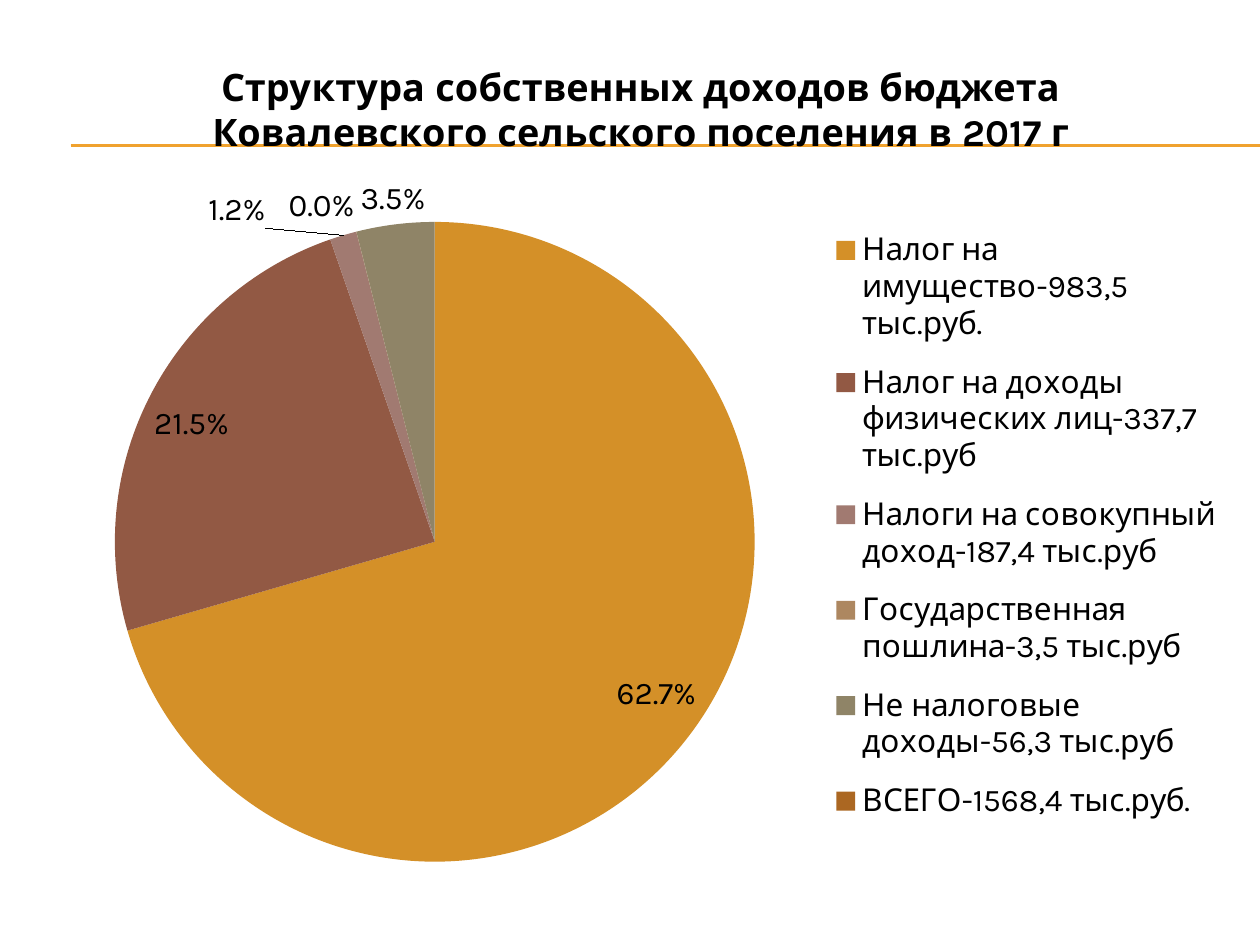
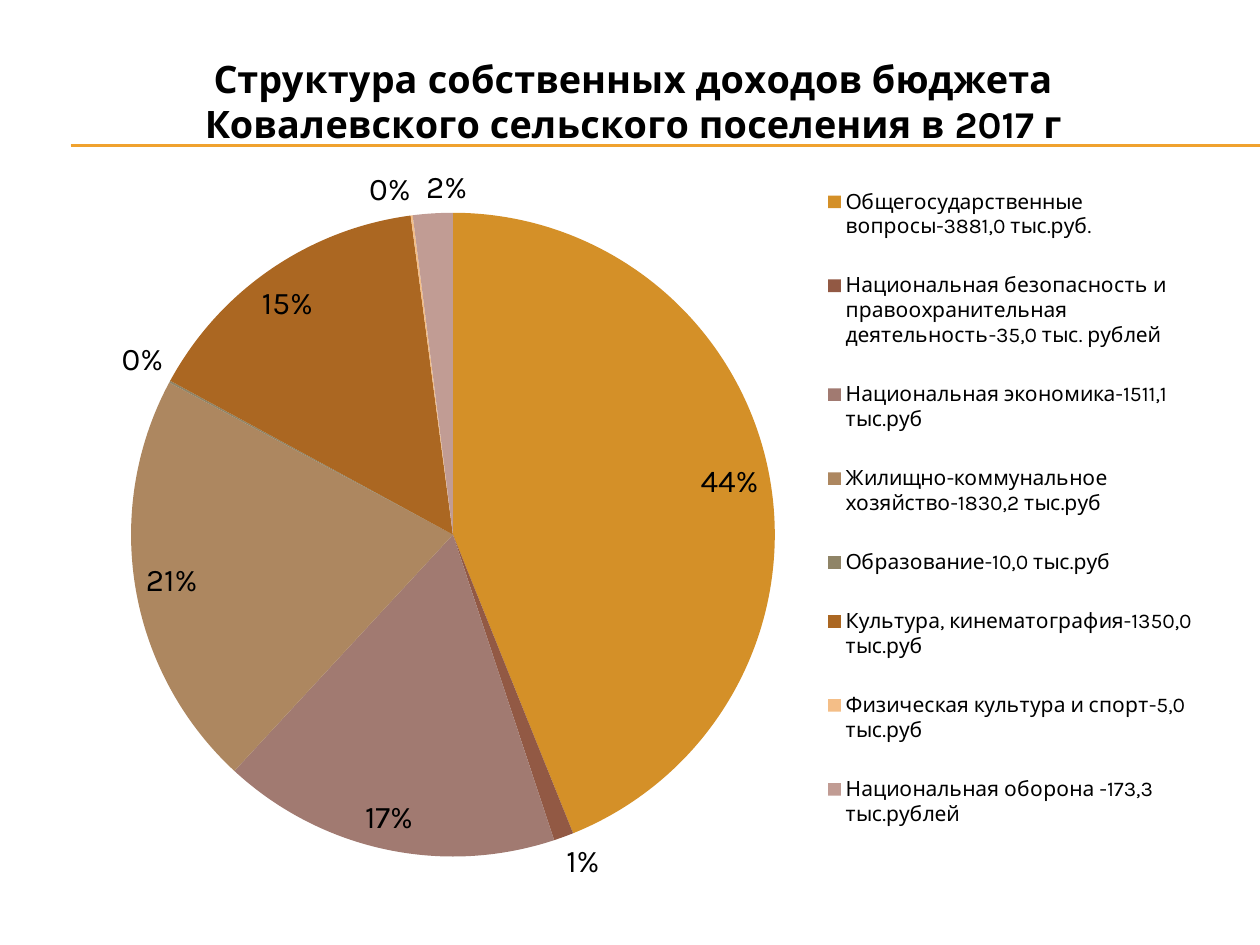
from pptx import Presentation
from pptx.chart.data import CategoryChartData
from pptx.dml.color import RGBColor
from pptx.enum.chart import XL_CHART_TYPE, XL_LABEL_POSITION, XL_LEGEND_POSITION
from pptx.enum.shapes import MSO_CONNECTOR
from pptx.oxml.ns import qn
from pptx.util import Inches, Pt
from lxml import etree

PIE = XL_CHART_TYPE.PIE
FIT = XL_LABEL_POSITION.BEST_FIT
RIGHT = XL_LEGEND_POSITION.RIGHT
STRAIGHT = MSO_CONNECTOR.STRAIGHT

# Content
TITLE = "Структура собственных доходов бюджета Ковалевского сельского поселения в 2017 г"
INCOME = [
    ("Налог на имущество-983,5 тыс.руб.", 0.627),
    ("Налог на доходы физических лиц-337,7 тыс.руб", 0.215),
    ("Налоги на совокупный доход-187,4 тыс.руб", 0.012),
    ("Государственная пошлина-3,5 тыс.руб", 0.0001),
    ("Не налоговые доходы-56,3 тыс.руб", 0.035),
    ("ВСЕГО-1568,4 тыс.руб.", None),
]
SPENDING = [
    ("Общегосударственные вопросы-3881,0 тыс.руб.", 0.44),
    ("Национальная безопасность и правоохранительная деятельность-35,0 тыс. рублей", 0.01),
    ("Национальная экономика-1511,1 тыс.руб", 0.17),
    ("Жилищно-коммунальное хозяйство-1830,2 тыс.руб", 0.21),
    ("Образование-10,0 тыс.руб", 0.001),
    ("Культура, кинематография-1350,0 тыс.руб", 0.15),
    ("Физическая культура и спорт-5,0 тыс.руб", 0.001),
    ("Национальная оборона -173,3 тыс.рублей", 0.02),
]

# Boxes are in inches on the slide: left, top, width, height;
# moves shift single labels sideways, in inches
SLIDES = [
    dict(rows=INCOME, fmt="0.0%", size=18, frame=(0.33, 0.29, 9.5, 6.69),
         head=(1.63, 0.44), pie=(0.91, 1.76, 5.08, 5.08), key=(6.54, 1.67, 3.2, 5.01),
         moves={2: -0.6, 4: 0.25}),
    dict(rows=SPENDING, fmt="0%", size=12, frame=(0.28, 0.21, 9.5, 7.01),
         head=(1.57, 0.37), pie=(1.04, 1.69, 5.11, 5.11), key=(6.42, 1.23, 3.2, 5.6),
         moves={7: 0.11}),
]

# Shared style
FONT = "Karla"
COLORS = {
    "rule": "F0A22E", "text": "000000",
    "gold": "D49028", "brick": "925944", "rose": "A17A71", "tan": "AD8760",
    "olive": "8F8467", "rust": "AB6722", "peach": "F4BE87", "blush": "C19C94",
}
SLICES = ["gold", "brick", "rose", "tan", "olive", "rust", "peach", "blush"]


def color(name):
    return RGBColor.from_string(COLORS[name])


def style(font, size, bold=False):
    font.name, font.size, font.bold = FONT, Pt(size), bold
    font.color.rgb = color("text")


def set_layout(node, index, pairs):
    """Give a chart part a manual layout."""
    layout = etree.Element(qn("c:layout"))
    manual = etree.SubElement(layout, qn("c:manualLayout"))
    for tag, val in pairs:
        etree.SubElement(manual, qn("c:" + tag)).set("val", val)
    node.insert(index, layout)


def place(node, frame, box, inner=False):
    """Pin a chart part to a box on the slide, as shares of the chart."""
    for old in node.findall(qn("c:layout")):
        node.remove(old)
    pairs = [("layoutTarget", "inner")] if inner else []
    pairs += [("xMode", "edge"), ("yMode", "edge")]
    left, top, wide, high = frame
    starts = (left, top, 0, 0)
    spans = (wide, high, wide, high)
    pairs += [(tag, f"{(v - s) / d:.3f}")
              for tag, v, s, d in zip("xywh", box, starts, spans)]
    over = node.find(qn("c:overlay"))
    set_layout(node, 0 if over is None else node.index(over), pairs)


def add_rules(slide):
    for y in (1.15, 1.16):
        rule = slide.shapes.add_connector(
            STRAIGHT, Inches(0.56), Inches(y), Inches(10), Inches(y))
        rule.line.color.rgb = color("rule")
        rule.line.width = Pt(0.75)
        etree.SubElement(rule._element.spPr, qn("a:effectLst"))


def add_labels(series, fmt, moves, wide):
    labels = series.data_labels
    labels.show_value = True
    labels.number_format, labels.number_format_is_linked = fmt, False
    labels.position = FIT
    style(labels.font, 18)
    for i, move in moves.items():
        label = series.points[i].data_label
        style(label.font, 18)
        label.position = FIT
        node = series._element.xpath(f"c:dLbls/c:dLbl[c:idx/@val='{i}']")[0]
        set_layout(node, 1, [("x", f"{move / wide:.3f}"), ("y", "0")])


def add_pie(slide, rows, fmt, size, frame, head, pie, key, moves):
    data = CategoryChartData(number_format=fmt)
    data.categories = [name for name, _ in rows]
    data.add_series(TITLE, [val for _, val in rows])
    chart = slide.shapes.add_chart(PIE, *map(Inches, frame), data).chart
    style(chart.font, 18)

    # Title
    chart.has_title = True
    chart.chart_title.text_frame.text = TITLE
    style(chart.chart_title.text_frame.paragraphs[0].font, 21.6, True)

    # Legend
    chart.has_legend = True
    chart.legend.position = RIGHT
    chart.legend.include_in_layout = False
    style(chart.legend.font, size)

    # Slices and labels
    plot = chart.plots[0]
    plot.vary_by_categories = True
    series = plot.series[0]
    for i, name in enumerate(SLICES[:len(rows)]):
        fill = series.points[i].format.fill
        fill.solid()
        fill.fore_color.rgb = color(name)
    add_labels(series, fmt, moves, frame[2])

    root = chart._chartSpace
    for tag, box in (("title", head), ("plotArea", pie), ("legend", key)):
        place(root.xpath(f"c:chart/c:{tag}")[0], frame, box, tag == "plotArea")


def main():
    deck = Presentation()
    deck.slide_width, deck.slide_height = Inches(10), Inches(7.5)
    for item in SLIDES:
        slide = deck.slides.add_slide(deck.slide_layouts[6])
        add_rules(slide)
        add_pie(slide, **item)
    deck.save("out.pptx")


if __name__ == "__main__":
    main()
